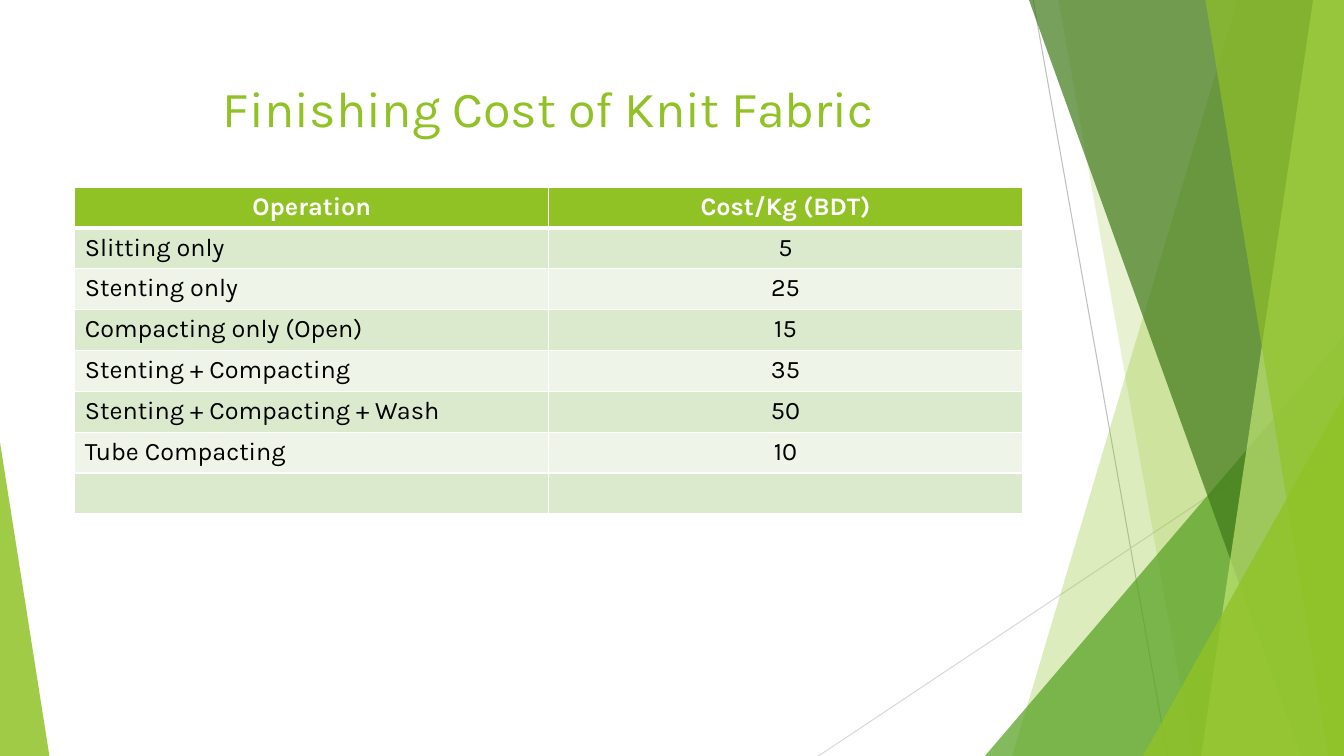
"""Build the slide on the finishing cost of knit fabric."""
from lxml import etree
from pptx import Presentation
from pptx.dml.color import RGBColor
from pptx.enum.shapes import MSO_CONNECTOR, MSO_SHAPE
from pptx.enum.text import MSO_ANCHOR, PP_ALIGN
from pptx.oxml import parse_xml
from pptx.oxml.ns import nsdecls, qn
from pptx.util import Pt

STRAIGHT = MSO_CONNECTOR.STRAIGHT
TRIANGLE = MSO_SHAPE.ISOSCELES_TRIANGLE
MIDDLE = MSO_ANCHOR.MIDDLE
LEFT, CENTER = PP_ALIGN.LEFT, PP_ALIGN.CENTER
FONT = "Karla"
GREEN, WHITE, BLACK = "90C226", "FFFFFF", "000000"
WIDTH, HEIGHT = 960, 540


def color(value):
    return RGBColor.from_string(value)


def add_span(para, text, size, shade, bold=False):
    span = para.add_run()
    span.text = text
    span.font.name = FONT
    span.font.size = Pt(size)
    span.font.bold = bold
    span.font.color.rgb = color(shade)


deck = Presentation()
deck.slide_width, deck.slide_height = Pt(WIDTH), Pt(HEIGHT)
page = deck.slides.add_slide(deck.slide_layouts[6])

thin_lines = [
    (738, 0, 834, HEIGHT, "BFBFBF"),
    (WIDTH, 290, 584.6, HEIGHT, "D9D9D9"),
]
for x1, y1, x2, y2, shade in thin_lines:
    line = page.shapes.add_connector(STRAIGHT, Pt(x1), Pt(y1), Pt(x2), Pt(y2))
    line.line.color.rgb = color(shade)
    line.line.width = Pt(0.75)
    etree.SubElement(line._element.spPr, qn("a:effectLst"))

# kind, geometry, colour, opacity in percent
facets = [
    ("band", (884, 723), "90C226", 30),
    ("band", (756, 852), "90C226", 20),
    ("triangle", (703.5, 240, 256.5, 300, 1), "54A021", 72),
    ("band", (735, 929.5), "3F7819", 70),
    ("band", (938, 858), "C0E474", 70),
    ("band", (861, 949), "90C226", 65),
    ("triangle", (816.5, 283, 143.5, 257, 1), "90C226", 80),
    ("triangle", (0, 316, 35.3, 224, 0), "90C226", 85),
]
for kind, geometry, shade, opacity in facets:
    if kind == "band":
        top_x, bottom_x = geometry
        builder = page.shapes.build_freeform(Pt(top_x), 0)
        corners = [(WIDTH, 0), (WIDTH, HEIGHT), (bottom_x, HEIGHT)]
        builder.add_line_segments([(Pt(x), Pt(y)) for x, y in corners])
        facet = builder.convert_to_shape()
    else:
        left, top, width, height, apex = geometry
        facet = page.shapes.add_shape(TRIANGLE, Pt(left), Pt(top), Pt(width), Pt(height))
        facet.adjustments[0] = apex
    facet.shadow.inherit = False
    facet.line.fill.background()
    facet.fill.solid()
    facet.fill.fore_color.rgb = color(shade)
    fill_color = facet._element.spPr.find(".//" + qn("a:srgbClr"))
    etree.SubElement(fill_color, qn("a:alpha"), val=str(opacity * 1000))

title_box = page.shapes.add_textbox(Pt(53.5), Pt(48.2), Pt(676.8), Pt(62))
title_box.text_frame.word_wrap = True
title_box.text_frame.vertical_anchor = MIDDLE
title_para = title_box.text_frame.paragraphs[0]
title_para.alignment = CENTER
title_para.line_spacing = 0.9
add_span(title_para, "Finishing Cost of Knit Fabric", 36, GREEN)

costs = [
    ("Operation", "Cost/Kg (BDT)"),
    ("Slitting only", "5"),
    ("Stenting only", "25"),
    ("Compacting only (Open)", "15"),
    ("Stenting + Compacting", "35"),
    ("Stenting + Compacting + Wash", "50"),
    ("Tube Compacting", "10"),
    ("", ""),
]
row_height = 29.2
table = page.shapes.add_table(
    len(costs), 2, Pt(53.5), Pt(133.5), Pt(676.8), Pt(row_height * len(costs))
).table
for column in table.columns:
    column.width = Pt(338.4)
for row_index, entries in enumerate(costs):
    table.rows[row_index].height = Pt(row_height)
    header = row_index == 0
    row_fill = GREEN if header else ("EEF4E8", "DBE9CD")[row_index % 2]
    borders = {"lnL": 1, "lnR": 1, "lnT": 3 if row_index == 1 else 1, "lnB": 3 if header else 1}
    for column_index, text in enumerate(entries):
        cell = table.cell(row_index, column_index)
        for side, weight in borders.items():
            cell._tc.get_or_add_tcPr().append(parse_xml(
                f'<a:{side} {nsdecls("a")} w="{Pt(weight)}"><a:solidFill>'
                f'<a:srgbClr val="{WHITE}"/></a:solidFill></a:{side}>'
            ))
        cell.fill.solid()
        cell.fill.fore_color.rgb = color(row_fill)
        para = cell.text_frame.paragraphs[0]
        para.alignment = CENTER if header or column_index == 1 else LEFT
        if text:
            add_span(para, text, 18, WHITE if header else BLACK, header)

deck.save("out.pptx")
